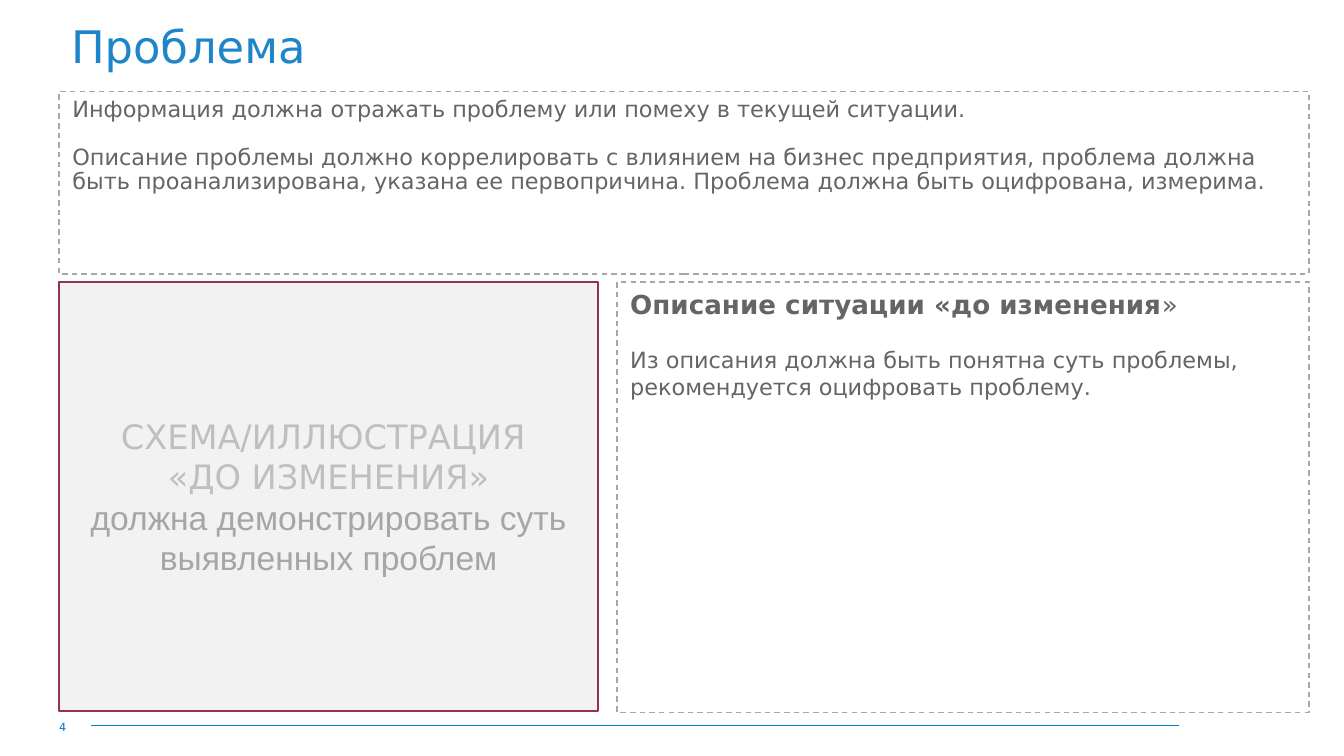
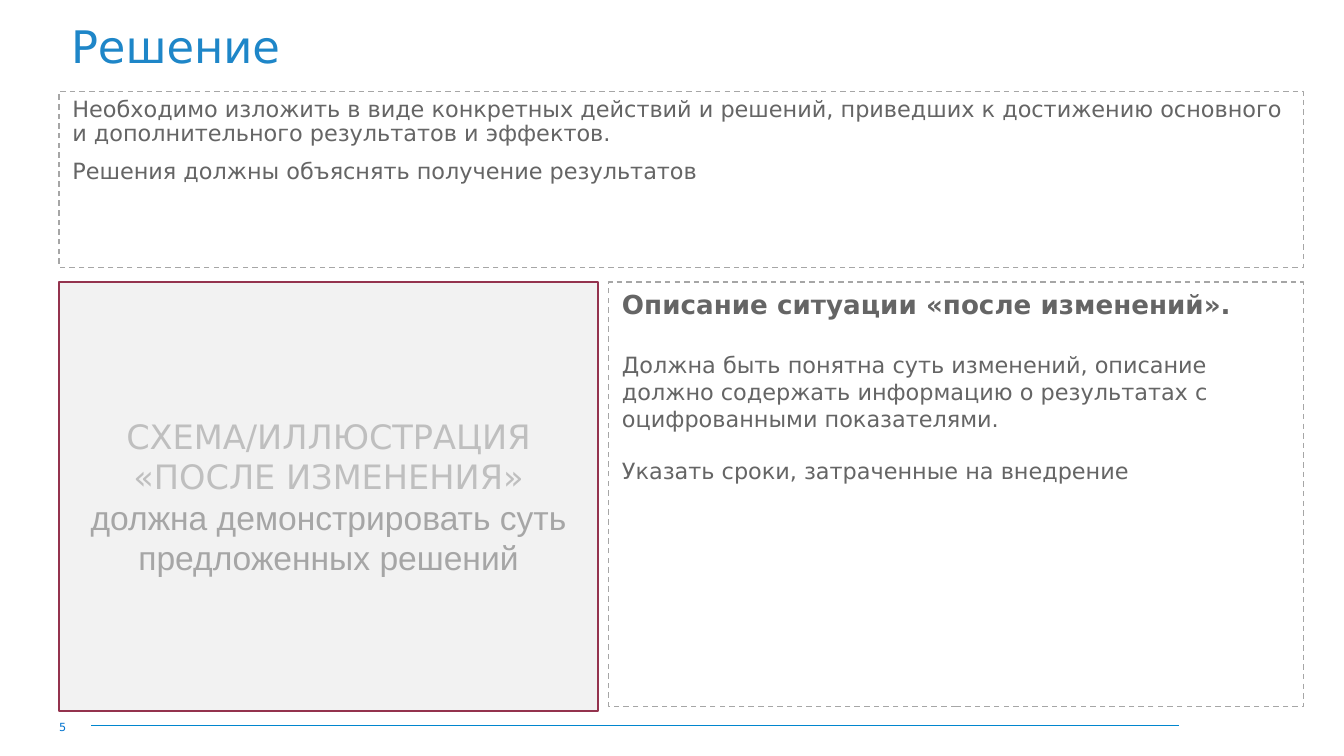
"""Builds the "problem" and "solution" slides of an improvement project template."""
import pptx
import pptx.util
import pptx.dml.color
import pptx.enum.dml
import pptx.enum.shapes
import pptx.enum.text
import pptx.oxml.ns
from lxml import etree

Inches = pptx.util.Inches
Pt = pptx.util.Pt
RGBColor = pptx.dml.color.RGBColor
ANCHOR = pptx.enum.text.MSO_ANCHOR
ALIGN = pptx.enum.text.PP_ALIGN

TITLE_BLUE = RGBColor(0x1E, 0x86, 0xC8)
RULE_BLUE = RGBColor(0x01, 0x86, 0xCE)
NUMBER_BLUE = RGBColor(0x00, 0x73, 0xCF)
TEXT_GRAY = RGBColor(0x65, 0x65, 0x65)
DASH_GRAY = RGBColor(0xA6, 0xA6, 0xA6)
HINT_GRAY = RGBColor(0xBF, 0xBF, 0xBF)
PANEL_GRAY = RGBColor(0xF2, 0xF2, 0xF2)
BORDEAUX = RGBColor(0x94, 0x33, 0x4E)
FONT = "DejaVu Sans"
HINT_FONT = "Arial"

LEFT = 0.44
LOWER_TOP = 2.1


def add_paragraph(tf, text, size, color, font=FONT, bold=False, before=0,
                  spacing=None, align=ALIGN.LEFT):
    p = tf.paragraphs[0]
    if p.runs:
        p = tf.add_paragraph()
    p.add_run().text = text
    p.alignment = align
    if before:
        p.space_before = Pt(before)
    if spacing:
        p.line_spacing = spacing
    p.font.size = Pt(size)
    p.font.name = font
    p.font.bold = bold
    p.font.color.rgb = color
    return p


def add_text_box(slide, box, inset=True):
    tf = slide.shapes.add_textbox(*map(Inches, box)).text_frame
    tf.word_wrap = True
    tf.vertical_anchor = ANCHOR.MIDDLE
    if not inset:
        tf.margin_left = tf.margin_right = tf.margin_top = tf.margin_bottom = 0
    return tf


def add_panel(slide, box, line_color, line_width, fill=None, dashed=False,
              anchor=ANCHOR.TOP):
    sp = slide.shapes.add_shape(pptx.enum.shapes.MSO_SHAPE.RECTANGLE, *map(Inches, box))
    sp.shadow.inherit = False
    if fill is None:
        sp.fill.background()
    else:
        sp.fill.solid()
        sp.fill.fore_color.rgb = fill
    sp.line.color.rgb = line_color
    sp.line.width = Pt(line_width)
    if dashed:
        sp.line.dash_style = pptx.enum.dml.MSO_LINE.DASH
    tf = sp.text_frame
    tf.word_wrap = True
    tf.vertical_anchor = anchor
    return tf


def add_footer(slide, number):
    rule = slide.shapes.add_connector(
        pptx.enum.shapes.MSO_CONNECTOR.STRAIGHT,
        Inches(0.68), Inches(5.4), Inches(8.77), Inches(5.4))
    rule.line.color.rgb = RULE_BLUE
    rule.line.width = Pt(0.5)
    cxn = rule._element
    etree.SubElement(cxn.spPr, pptx.oxml.ns.qn("a:effectLst"))
    cxn.remove(cxn.find(pptx.oxml.ns.qn("p:style")))
    tf = add_text_box(slide, (LEFT, 5.36, 0.38, 0.1), inset=False)
    add_paragraph(tf, str(number), 6, NUMBER_BLUE)


def add_title(slide, text, width):
    tf = add_text_box(slide, (0.43, 0.13, width, 0.47))
    add_paragraph(tf, text, 24, TITLE_BLUE, spacing=0.9)


def add_summary(slide, width, height, texts, gap):
    tf = add_panel(slide, (LEFT, 0.68, width, height), DASH_GRAY, 0.75, dashed=True)
    for i, text in enumerate(texts):
        add_paragraph(tf, text, 12, TEXT_GRAY, before=gap if i else 0, spacing=0.9)


def add_description(slide, left, width, height, heading, ending, body):
    tf = add_panel(slide, (left, LOWER_TOP, width, height), DASH_GRAY, 0.75, dashed=True)
    p = add_paragraph(tf, heading, 14, TEXT_GRAY, bold=True)
    if ending:
        r = p.add_run()
        r.text = ending
        r.font.bold = False
    for text, gap in body:
        add_paragraph(tf, text, 12, TEXT_GRAY, before=gap)


def add_illustration(slide, labels, hint):
    tf = add_panel(slide, (LEFT, LOWER_TOP, 4.01, 3.19), BORDEAUX, 1,
                   fill=PANEL_GRAY, anchor=ANCHOR.MIDDLE)
    for label in labels:
        add_paragraph(tf, label, 18, HINT_GRAY, align=ALIGN.CENTER)
    add_paragraph(tf, hint, 18, DASH_GRAY, font=HINT_FONT, align=ALIGN.CENTER)


def add_slide(prs, number, title, title_width):
    slide = prs.slides.add_slide(prs.slide_layouts[6])
    add_footer(slide, number)
    add_title(slide, title, title_width)
    return slide


def add_problem(prs):
    slide = add_slide(prs, 4, "Проблема", 9.31)
    add_summary(slide, 9.3, 1.36, [
        "Информация должна отражать проблему или помеху в текущей ситуации.",
        "Описание проблемы должно коррелировать с влиянием на бизнес предприятия, "
        "проблема должна быть проанализирована, указана ее первопричина. "
        "Проблема должна быть оцифрована, измерима."], 12.8)
    add_description(slide, 4.59, 5.15, 3.2, "Описание ситуации «до изменения", "»", [
        ("Из описания должна быть понятна суть проблемы, "
         "рекомендуется оцифровать проблему.", 14)])
    add_illustration(slide, ["СХЕМА/ИЛЛЮСТРАЦИЯ ", "«ДО ИЗМЕНЕНИЯ»"],
                     "должна демонстрировать суть выявленных проблем")


def add_solution(prs):
    slide = add_slide(prs, 5, "Решение", 2.42)
    add_summary(slide, 9.26, 1.31, [
        "Необходимо изложить в виде конкретных действий и решений, приведших "
        "к достижению основного и дополнительного результатов и эффектов.",
        "Решения должны объяснять получение результатов"], 7.5)
    add_description(slide, 4.53, 5.17, 3.16, "Описание ситуации «после изменений».", "", [
        ("Должна быть понятна суть изменений, описание должно содержать "
         "информацию о результатах с оцифрованными показателями.", 16.6),
        ("Указать сроки, затраченные на внедрение", 13.5)])
    add_illustration(slide, ["СХЕМА/ИЛЛЮСТРАЦИЯ «ПОСЛЕ ИЗМЕНЕНИЯ»"],
                     "должна демонстрировать суть предложенных решений")


def main():
    prs = pptx.Presentation()
    prs.slide_width = Inches(10)
    prs.slide_height = prs.slide_width * 9 // 16
    add_problem(prs)
    add_solution(prs)
    prs.save("out.pptx")


if __name__ == "__main__":
    main()
